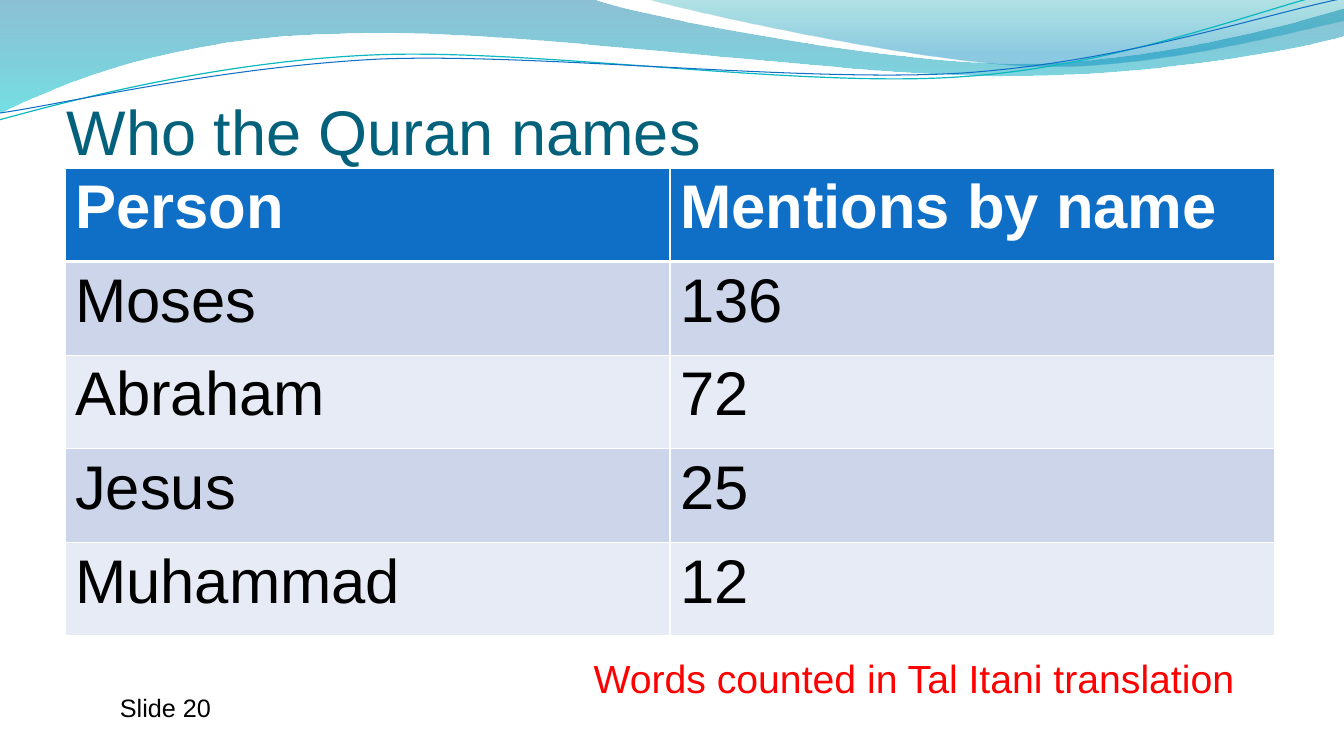
"""Build the slide that compares how often the Quran names four people."""
from dataclasses import dataclass

from lxml.etree import Element, SubElement
from pptx import Presentation
from pptx.dml.color import RGBColor
from pptx.enum.text import MSO_ANCHOR, MSO_AUTO_SIZE, PP_ALIGN
from pptx.oxml.ns import qn
from pptx.util import Pt

TITLE = "Who the Quran names"
MENTIONS = [
    ("Person", "Mentions by name"),
    ("Moses", "136"),
    ("Abraham", "72"),
    ("Jesus", "25"),
    ("Muhammad", "12"),
]
SOURCE_NOTE = "Words counted in Tal Itani translation"
PAGE_LABEL = "Slide 20"

WAVE_FILLS = [
    {
        "outline": [(0, 0), (592, -1), (639, 17, 892, 64, 1019, 64),
                    (1147, 64, 1288, 26, 1344, 9), (1346, 36),
                    (1322, 44, 1169, 77, 1002, 76), (836, 76, 513, 28, 346, 34),
                    (173, 36, 61, 84, -1, 114)],
        "stops": [(0, "0074A1", 45), (1, "00C6CF", 55)],
    },
    {
        "outline": [(644, -1), (684, 11, 916, 62, 1033, 66),
                    (1150, 70, 1292, 32, 1344, 21), (1344, 0)],
        "stops": [(0, "00A1A9", 30), (0.8, "008BBF", 45)],
    },
]
WAVE_LINES = [
    {
        "outline": [(-1, 120), (65, 102, 213, 62, 372, 55),
                    (531, 48, 796, 88, 958, 77), (1119, 67, 1262, 8, 1342, -10)],
        "color": "0AB8BF", "width": 0.85,
    },
    {
        "outline": [(0, 113), (64, 104, 220, 67, 381, 59),
                    (541, 53, 802, 83, 963, 73), (1124, 62, 1265, 14, 1345, -2)],
        "color": "0F6FC6", "width": 0.75,
    },
]

EMU_PER_PX = 914400 / 100.8
SLIDE_SIZE = (1344, 756)
TITLE_BOX = (67, 89, 1210, 79)
TABLE_BOX = (65, 168, 1210, 468)
NOTE_BOX = (521, 649, 723, 57)
PAGE_BOX = (110, 687, 119, 40)


@dataclass(frozen=True)
class Theme:
    """Colours, font and type sizes of the slide."""
    font: str = "Arial"
    title: str = "04617B"
    header: str = "0F6FC6"
    bands: tuple = ("CCD5EA", "E7EBF5")
    light: str = "FFFFFF"
    dark: str = "000000"
    accent: str = "FF0000"
    title_size: int = 45
    table_size: int = 44
    note_size: int = 28
    page_size: int = 18
    rule: int = 1
    header_rule: int = 3


THEME = Theme()


def px(length):
    """Turn px into EMU."""
    return round(length * EMU_PER_PX)


def rgb(code):
    """Turn a hex code into a colour."""
    return RGBColor.from_string(code)


def add_wave(slide, outline, close):
    """Draw an outline of lines and cubic curves without shadow."""
    anchors = [(px(segment[-2]), px(segment[-1])) for segment in outline]
    builder = slide.shapes.build_freeform(*anchors[0])
    builder.add_line_segments(anchors[1:], close=close)
    wave = builder.convert_to_shape()
    wave.shadow.inherit = False
    edges = list(wave.element.spPr.iter(qn("a:lnTo")))
    for edge, segment in zip(edges, outline[1:]):
        if len(segment) == 6:
            curve = Element(qn("a:cubicBezTo"))
            for x, y in zip(segment[::2], segment[1::2]):
                SubElement(curve, qn("a:pt"), x=str(px(x) - wave.left),
                           y=str(px(y) - wave.top))
            edge.getparent().replace(edge, curve)
    return wave


def add_wave_fill(slide, outline, stops):
    """Draw a translucent wave that fades downwards."""
    wave = add_wave(slide, outline, True)
    wave.line.fill.background()
    wave.fill.gradient()
    wave.fill.gradient_angle = 270
    for stop, (position, color, _) in zip(wave.fill.gradient_stops, stops):
        stop.position = position
        stop.color.rgb = rgb(color)
    tints = wave.element.spPr.iter(qn("a:srgbClr"))
    for tint, (_, _, opacity) in zip(tints, stops):
        SubElement(tint, qn("a:alpha"), val=str(opacity * 1000))


def add_wave_line(slide, outline, color, width):
    """Draw a thin open wave."""
    wave = add_wave(slide, outline, False)
    wave.fill.background()
    wave.line.color.rgb = rgb(color)
    wave.line.width = Pt(width)


def write(frame, text, size, color, bold=False):
    """Put one styled run in the first paragraph."""
    run = frame.paragraphs[0].add_run()
    run.text = text
    run.font.name = THEME.font
    run.font.size = Pt(size)
    run.font.bold = bold
    run.font.color.rgb = rgb(color)


def add_label(slide, box, text, size, color, fit=MSO_AUTO_SIZE.SHAPE_TO_FIT_TEXT):
    """Add a wrapping text box with one line of text."""
    frame = slide.shapes.add_textbox(*map(px, box)).text_frame
    frame.word_wrap = True
    frame.auto_size = fit
    write(frame, text, size, color)
    return frame


def add_border(cell, side, width):
    """Add one light cell border."""
    border = SubElement(cell._tc.get_or_add_tcPr(), qn(f"a:{side}"), w=str(Pt(width)))
    paint = SubElement(border, qn("a:solidFill"))
    SubElement(paint, qn("a:srgbClr"), val=THEME.light)


def add_mentions(slide):
    """Add the table of names and counts."""
    rows, columns = len(MENTIONS), len(MENTIONS[0])
    table = slide.shapes.add_table(rows, columns, *map(px, TABLE_BOX)).table
    for row, entry in enumerate(MENTIONS):
        is_header = row == 0
        fill = THEME.header if is_header else THEME.bands[(row - 1) % 2]
        top = THEME.header_rule if row == 1 else THEME.rule
        bottom = THEME.header_rule if is_header else THEME.rule
        for column, text in enumerate(entry):
            cell = table.cell(row, column)
            write(cell.text_frame, text, THEME.table_size,
                  THEME.light if is_header else THEME.dark, is_header)
            for side, width in (("lnL", THEME.rule), ("lnR", THEME.rule),
                                ("lnT", top), ("lnB", bottom)):
                add_border(cell, side, width)
            cell.fill.solid()
            cell.fill.fore_color.rgb = rgb(fill)


def main():
    """Assemble and save the slide."""
    deck = Presentation()
    deck.slide_width, deck.slide_height = map(px, SLIDE_SIZE)
    slide = deck.slides.add_slide(deck.slide_layouts[6])
    for wave in WAVE_FILLS:
        add_wave_fill(slide, **wave)
    for wave in WAVE_LINES:
        add_wave_line(slide, **wave)
    title = add_label(slide, TITLE_BOX, TITLE, THEME.title_size, THEME.title,
                      MSO_AUTO_SIZE.NONE)
    title.vertical_anchor = MSO_ANCHOR.BOTTOM
    title.margin_left = title.margin_right = title.margin_bottom = 0
    add_mentions(slide)
    note = add_label(slide, NOTE_BOX, SOURCE_NOTE, THEME.note_size, THEME.accent)
    note.paragraphs[0].alignment = PP_ALIGN.RIGHT
    add_label(slide, PAGE_BOX, PAGE_LABEL, THEME.page_size, THEME.dark)
    deck.save("out.pptx")


if __name__ == "__main__":
    main()
